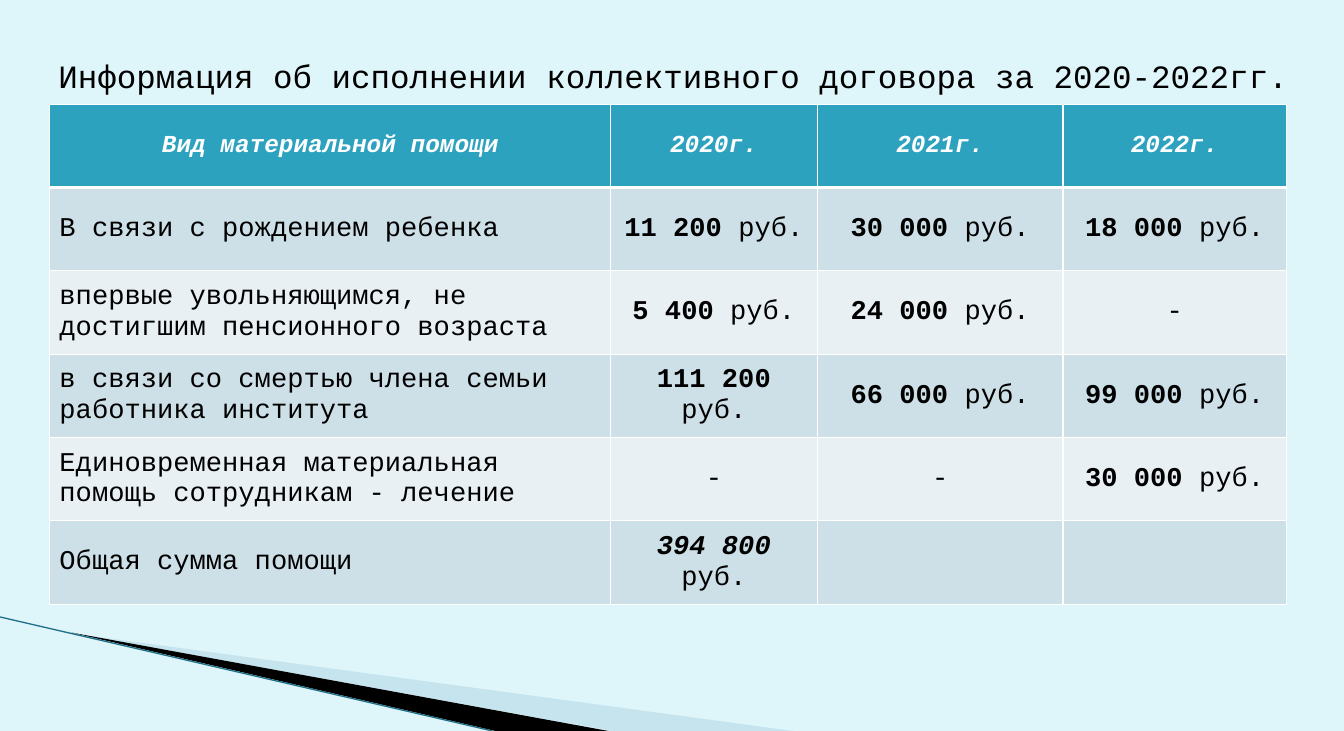
from typing import NamedTuple

from lxml import etree
from pptx import Presentation, util as u
from pptx.dml.color import RGBColor
from pptx.enum import shapes, text
from pptx.oxml.ns import qn

FONT = "Courier New"
BLACK, WHITE = "000000", "FFFFFF"
HEADER_FILL = "2DA2BF"
BAND_FILLS = ("CDE0E8", "E8F0F4")
COLUMN_WIDTHS = (5.75, 2.12, 2.52, 2.29)
ROW_HEIGHT = 0.855
HEADINGS = ("Вид материальной помощи", "2020г.", "2021г.", "2022г.")


class Wedge(NamedTuple):
    frame: tuple[float, float, float, float]
    points: tuple[tuple[float, float], ...]
    fill: str
    opacity: int


class AidRow(NamedTuple):
    kind: str
    amounts: tuple[str, str, str]
    italic: bool = False


WEDGES = (
    Wedge((1.08, 5.47, 5.73, 1.58),
          ((0.75, 6.5), (8.13, 7.5), (6.28, 7.5)), "A0CBDC", 40),
    Wedge((-0.08, 6.33, 5.73, 0.92),
          ((0.73, 6.49), (6.24, 7.5), (5.08, 7.5)), BLACK, 100),
)
AID_ROWS = (
    AidRow("В связи с рождением ребенка", ("11 200", "30 000", "18 000")),
    AidRow("впервые увольняющимся, не достигшим пенсионного возраста",
           ("5 400", "24 000", "-")),
    AidRow("в связи со смертью члена семьи работника института",
           ("111 200", "66 000", "99 000")),
    AidRow("Единовременная материальная помощь сотрудникам - лечение",
           ("-", "-", "30 000")),
    AidRow("Общая сумма помощи", ("394 800", "", ""), italic=True),
)


def rgb(value: str) -> RGBColor:
    return RGBColor.from_string(value)


def write(frame, words: str, *, size: float = 20, color: str = BLACK,
          bold: bool = False, italic: bool = False, centered: bool = True) -> None:
    """Append a run to the first paragraph of the frame."""
    paragraph = frame.paragraphs[0]
    paragraph.alignment = text.PP_ALIGN.CENTER if centered else text.PP_ALIGN.LEFT
    run = paragraph.add_run()
    run.text = words
    run.font.name = FONT
    run.font.size = u.Pt(size)
    run.font.bold = bold
    run.font.italic = italic
    run.font.color.rgb = rgb(color)


def set_frame(shape, frame: tuple[float, float, float, float]) -> None:
    """Change the frame of a freeform while its outline stays in place."""
    left, top, width, height = map(u.Inches, frame)
    outline = shape._element.find(f".//{qn('a:path')}")
    for point in outline.iter(qn("a:pt")):
        point.set("x", str(int(point.get("x")) + shape.left - left))
        point.set("y", str(int(point.get("y")) + shape.top - top))
    outline.set("w", str(width))
    outline.set("h", str(height))
    shape.left, shape.top, shape.width, shape.height = left, top, width, height


def draw_wedge(slide, wedge: Wedge) -> None:
    start, *rest = [(u.Inches(x), u.Inches(y)) for x, y in wedge.points]
    builder = slide.shapes.build_freeform(*start)
    builder.add_line_segments(rest, close=True)
    shape = builder.convert_to_shape()
    set_frame(shape, wedge.frame)
    shape.shadow.inherit = False
    shape.line.fill.background()
    shape.fill.solid()
    shape.fill.fore_color.rgb = rgb(wedge.fill)
    if wedge.opacity < 100:
        color = shape.fill._xPr.find(qn("a:solidFill"))[0]
        etree.SubElement(color, qn("a:alpha"), val=str(wedge.opacity * 1000))


def draw_edge(slide) -> None:
    """Draw the thin line along the lower side of the wedges."""
    edge = slide.shapes.add_connector(
        shapes.MSO_CONNECTOR.STRAIGHT,
        u.Inches(0), u.Inches(6.33), u.Inches(5.05), u.Inches(7.5))
    edge.line.color.rgb = rgb("1F6F88")
    edge.line.width = u.Pt(0.95)
    etree.SubElement(edge._element.spPr, qn("a:effectLst"))


def draw_title(slide) -> None:
    title = slide.shapes.add_textbox(
        u.Inches(0.12), u.Inches(0.53), u.Inches(13.56), u.Inches(0.5))
    title.text_frame.word_wrap = True
    title.text_frame.auto_size = text.MSO_AUTO_SIZE.SHAPE_TO_FIT_TEXT
    write(title.text_frame,
          "Информация об исполнении коллективного договора за 2020-2022гг.", size=24)


def style_cell(cell, fill: str, top: float = 1, bottom: float = 1) -> None:
    """Fill the cell and give it white borders of the given widths in points."""
    cell.vertical_anchor = text.MSO_ANCHOR.MIDDLE
    properties = cell._tc.get_or_add_tcPr()
    for side, width in (("L", 1), ("R", 1), ("T", top), ("B", bottom)):
        border = etree.SubElement(properties, qn(f"a:ln{side}"), w=str(u.Pt(width)))
        solid = etree.SubElement(border, qn("a:solidFill"))
        etree.SubElement(solid, qn("a:srgbClr"), val=WHITE)
    cell.fill.solid()
    cell.fill.fore_color.rgb = rgb(fill)


def write_amount(frame, amount: str, italic: bool) -> None:
    if amount == "-":
        write(frame, amount)
    elif amount:
        write(frame, amount, bold=True, italic=italic)
        write(frame, " руб.")


def draw_aid_table(slide) -> None:
    row_count = len(AID_ROWS) + 1
    table = slide.shapes.add_table(
        row_count, len(HEADINGS), u.Inches(0.51), u.Inches(1.07),
        u.Inches(sum(COLUMN_WIDTHS)), u.Inches(ROW_HEIGHT * row_count)).table
    table.first_row = table.horz_banding = False
    for column, width in zip(table.columns, COLUMN_WIDTHS):
        column.width = u.Inches(width)

    for column, heading in enumerate(HEADINGS):
        cell = table.cell(0, column)
        style_cell(cell, HEADER_FILL, bottom=3)
        write(cell.text_frame, heading, size=18, color=WHITE, bold=True, italic=True)

    for index, aid in enumerate(AID_ROWS):
        kind_cell, *amount_cells = table.rows[index + 1].cells
        for cell in (kind_cell, *amount_cells):
            style_cell(cell, BAND_FILLS[index % 2], top=3 if index == 0 else 1)
        write(kind_cell.text_frame, aid.kind, centered=False)
        for cell, amount in zip(amount_cells, aid.amounts):
            write_amount(cell.text_frame, amount, aid.italic)


def main() -> None:
    deck = Presentation()
    deck.slide_width, deck.slide_height = u.Inches(13.78), u.Inches(7.5)
    slide = deck.slides.add_slide(deck.slide_layouts[6])
    slide.background.fill.solid()
    slide.background.fill.fore_color.rgb = rgb("DEF5FA")
    for wedge in WEDGES:
        draw_wedge(slide, wedge)
    draw_edge(slide)
    draw_title(slide)
    draw_aid_table(slide)
    deck.save("out.pptx")


if __name__ == "__main__":
    main()
